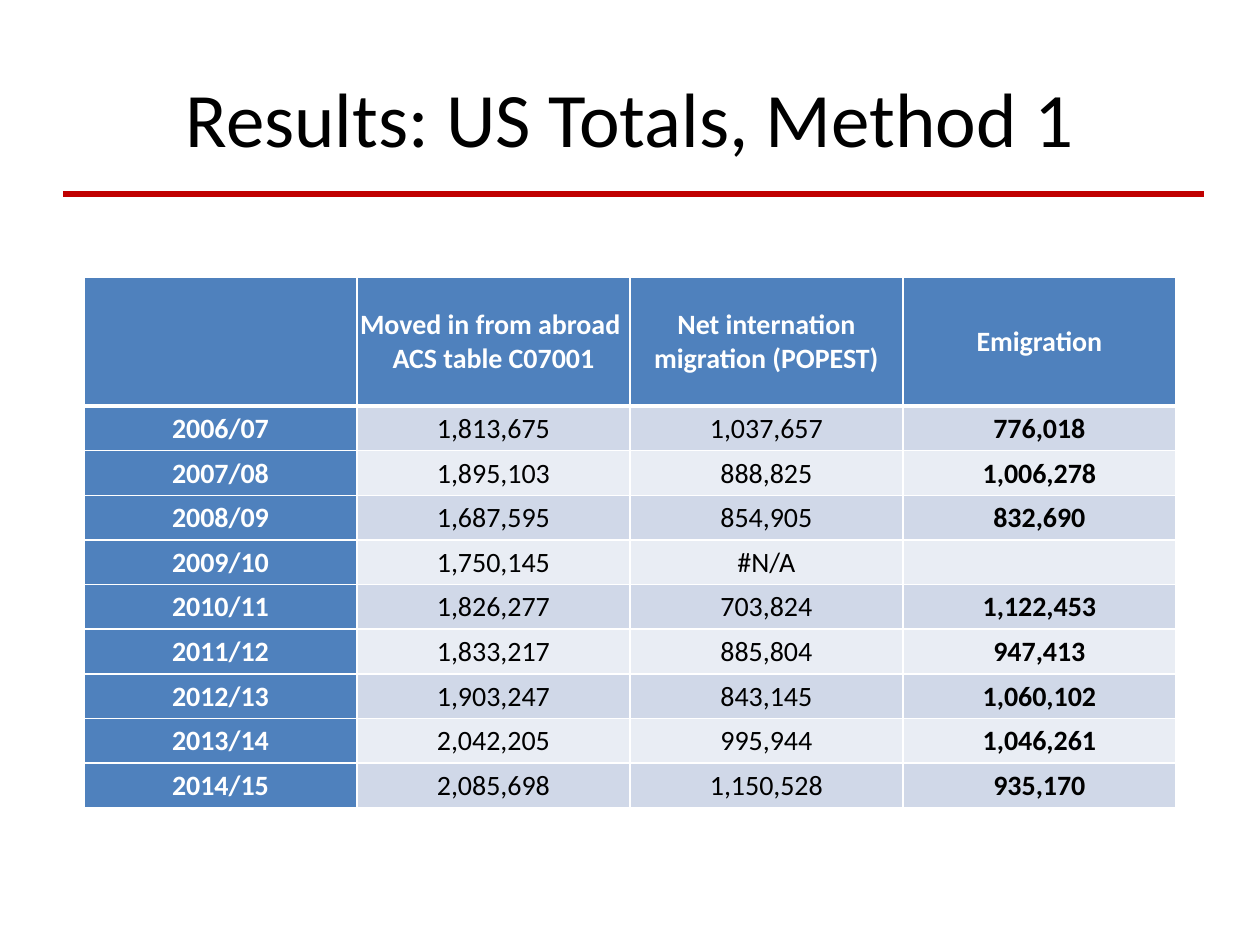
from lxml import etree
from pptx import Presentation
from pptx.dml.color import RGBColor
from pptx.enum.shapes import MSO_CONNECTOR
from pptx.enum.text import MSO_ANCHOR, PP_ALIGN
from pptx.oxml.ns import qn
from pptx.util import Emu, Pt

CENTER = PP_ALIGN.CENTER
MIDDLE = MSO_ANCHOR.MIDDLE
STRAIGHT = MSO_CONNECTOR.STRAIGHT
FONT = "Calibri"
BLACK, WHITE, RED = "000000", "FFFFFF", "C00000"
BLUE, BANDS = "4F81BD", ("D0D8E8", "E9EDF4")

HEADERS = ["", "Moved in from abroad \nACS table C07001",
           "Net internation migration (POPEST)", "Emigration"]
ROWS = [
    ["2006/07", "1,813,675", "1,037,657", "776,018"],
    ["2007/08", "1,895,103", "888,825", "1,006,278"],
    ["2008/09", "1,687,595", "854,905", "832,690"],
    ["2009/10", "1,750,145", "#N/A", ""],
    ["2010/11", "1,826,277", "703,824", "1,122,453"],
    ["2011/12", "1,833,217", "885,804", "947,413"],
    ["2012/13", "1,903,247", "843,145", "1,060,102"],
    ["2013/14", "2,042,205", "995,944", "1,046,261"],
    ["2014/15", "2,085,698", "1,150,528", "935,170"],
]


def px(n):
    return Emu(round(n * 914400 / 126))


def rgb(color):
    return RGBColor.from_string(color)


def add_text(tf, text, size=16, color=BLACK, bold=False):
    p = tf.paragraphs[0]
    p.alignment = CENTER
    if not text:
        return
    for i, line in enumerate(text.split("\n")):
        if i:
            p.add_line_break()
        r = p.add_run()
        r.text = line
        r.font.name = FONT
        r.font.size = Pt(size)
        r.font.bold = bold
        r.font.color.rgb = rgb(color)


def set_borders(cell, **widths):
    tcPr = cell._tc.get_or_add_tcPr()
    for i, side in enumerate("LRTB"):
        ln = etree.Element(qn(f"a:ln{side}"), w=str(Pt(widths.get(side, 1))))
        fill = etree.SubElement(ln, qn("a:solidFill"))
        etree.SubElement(fill, qn("a:srgbClr"), val=WHITE)
        tcPr.insert(i, ln)


def add_title(s, x, y, w, h, text):
    rule_y = y + h - 1
    line = s.shapes.add_connector(STRAIGHT, px(x), px(rule_y), px(x + w + 7), px(rule_y))
    line.line.color.rgb = rgb(RED)
    line.line.width = Pt(3)
    etree.SubElement(line._element.spPr, qn("a:effectLst"))
    tf = s.shapes.add_textbox(px(x), px(y), px(w), px(h)).text_frame
    tf.word_wrap = True
    tf.vertical_anchor = MIDDLE
    add_text(tf, text, size=44)


def add_results(s, x, y, w, h, head_h):
    data = [HEADERS] + ROWS
    cols = len(HEADERS)
    table = s.shapes.add_table(len(data), cols, px(x), px(y), px(w), px(h)).table
    for col in table.columns:
        col.width = px(w / cols)
    for i, values in enumerate(data):
        table.rows[i].height = px(head_h if i == 0 else (h - head_h) / len(ROWS))
        for j, text in enumerate(values):
            label = i == 0 or j == 0
            cell = table.cell(i, j)
            cell.vertical_anchor = MIDDLE
            cell.margin_left = cell.margin_right = cell.margin_top = px(1)
            cell.margin_bottom = 0
            cell.fill.solid()
            cell.fill.fore_color.rgb = rgb(BLUE if label else BANDS[(i - 1) % 2])
            set_borders(cell, T=3 if i == 1 else 1, B=3 if i == 0 else 1)
            add_text(cell.text_frame, text, color=WHITE if label else BLACK,
                     bold=label or j == cols - 1)


def main():
    prs = Presentation()
    prs.slide_width, prs.slide_height = px(1260), px(945)
    s = prs.slides.add_slide(prs.slide_layouts[6])
    add_title(s, 63, 38, 1134, 157, "Results: US Totals, Method 1")
    add_results(s, 84, 277, 1092, 531, 129)
    prs.save("out.pptx")


if __name__ == "__main__":
    main()
